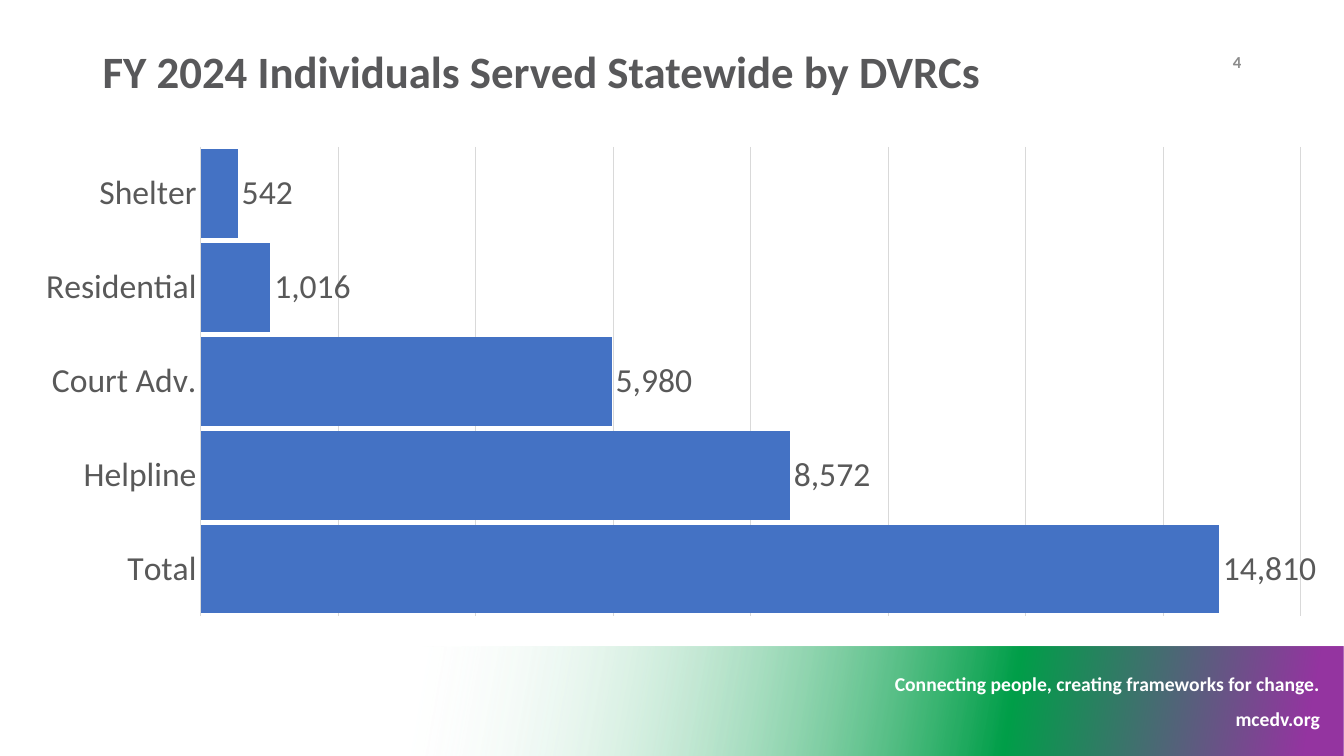
from dataclasses import dataclass

from lxml import etree
from pptx import Presentation
from pptx import util as u
from pptx.chart import data as chart_data
from pptx.dml.color import RGBColor
from pptx.enum import chart as chart_enum
from pptx.enum import shapes, text
from pptx.oxml import parse_xml
from pptx.oxml.ns import nsdecls, qn

FONT = "Calibri"
WHITE = RGBColor(0xFF, 0xFF, 0xFF)
GREEN = RGBColor(0x00, 0x9E, 0x48)
PURPLE = RGBColor(0x94, 0x34, 0xA0)
TITLE_GRAY = RGBColor(0x58, 0x58, 0x5A)
NUMBER_GRAY = RGBColor(0x8C, 0x8C, 0x8C)
LABEL_GRAY = RGBColor(0x59, 0x59, 0x59)
GRID_GRAY = RGBColor(0xD9, 0xD9, 0xD9)
BAR_BLUE = RGBColor(0x44, 0x72, 0xC4)

SLIDE_WIDTH = u.Inches(13.33)
SLIDE_HEIGHT = u.Inches(7.5)


@dataclass(frozen=True)
class Area:
    """Left, top, width and height in percent of the slide."""

    left: float
    top: float
    width: float
    height: float

    def lengths(self) -> tuple[int, int, int, int]:
        return (
            round(SLIDE_WIDTH * self.left / 100),
            round(SLIDE_HEIGHT * self.top / 100),
            round(SLIDE_WIDTH * self.width / 100),
            round(SLIDE_HEIGHT * self.height / 100),
        )


@dataclass(frozen=True)
class Label:
    words: str
    area: Area
    size: int
    color: RGBColor
    align: text.PP_ALIGN = text.PP_ALIGN.RIGHT
    anchor: text.MSO_ANCHOR = text.MSO_ANCHOR.MIDDLE
    line_spacing: float = 1.0


@dataclass(frozen=True)
class Stop:
    position: int
    color: RGBColor
    opacity: int = 100


FOOTER = Area(0, 85.47, 100, 14.53)
FOOTER_STOPS = [Stop(30, WHITE, 2), Stop(75, GREEN), Stop(97, PURPLE)]
FOOTER_ANGLE = 10

LABELS = [
    Label("mcedv.org", Area(88, 92.8, 10.95, 4.53), 14, WHITE,
          anchor=text.MSO_ANCHOR.TOP),
    Label("Connecting people, creating frameworks for change.",
          Area(64, 88.27, 34.95, 4.53), 14, WHITE, anchor=text.MSO_ANCHOR.TOP),
    Label("FY 2024 Individuals Served Statewide by DVRCs",
          Area(6.9, 5.33, 77.8, 8.8), 32, TITLE_GRAY,
          align=text.PP_ALIGN.LEFT, line_spacing=0.9),
    Label("4", Area(86.35, 5.47, 6.75, 5.33), 12, NUMBER_GRAY),
]

CHART = Area(1.28, 18.13, 97.45, 64.67)
PLOT_SHARES = {"x": 0.14, "y": 0.02, "w": 0.84, "h": 0.96}
SERVED = {
    "Total": 14810,
    "Helpline": 8572,
    "Court Adv.": 5980,
    "Residential": 1016,
    "Shelter": 542,
}


def add_footer(page) -> None:
    band = page.shapes.add_shape(shapes.MSO_SHAPE.RECTANGLE, *FOOTER.lengths())
    band.shadow.inherit = False
    band.line.fill.background()
    band.fill.gradient()
    band.fill.gradient_angle = 360 - FOOTER_ANGLE
    stops = band.element.spPr.find(".//" + qn("a:gsLst"))
    for old in list(stops):
        stops.remove(old)
    for stop in FOOTER_STOPS:
        entry = etree.SubElement(stops, qn("a:gs"), pos=str(stop.position * 1000))
        color = etree.SubElement(entry, qn("a:srgbClr"), val=str(stop.color))
        if stop.opacity < 100:
            etree.SubElement(color, qn("a:alpha"), val=str(stop.opacity * 1000))


def style_font(font, size: int, color: RGBColor, bold: bool = False) -> None:
    font.name = FONT
    font.size = u.Pt(size)
    font.bold = bold
    font.color.rgb = color


def add_label(page, label: Label) -> None:
    box = page.shapes.add_textbox(*label.area.lengths())
    frame = box.text_frame
    frame.word_wrap = True
    frame.vertical_anchor = label.anchor
    frame.text = label.words
    para = frame.paragraphs[0]
    para.alignment = label.align
    para.line_spacing = label.line_spacing
    style_font(para.runs[0].font, label.size, label.color, bold=True)


def style_line(line) -> None:
    line.color.rgb = GRID_GRAY
    line.width = u.Pt(0.75)


def place_plot(chart) -> None:
    plot_area = chart.element.find(".//" + qn("c:plotArea"))
    for old in plot_area.findall(qn("c:layout")):
        plot_area.remove(old)
    shares = "".join(f'<c:{key} val="{share}"/>' for key, share in PLOT_SHARES.items())
    plot_area.insert(0, parse_xml(
        f'<c:layout {nsdecls("c")}><c:manualLayout><c:layoutTarget val="inner"/>'
        f'<c:xMode val="edge"/><c:yMode val="edge"/>{shares}'
        "</c:manualLayout></c:layout>"
    ))


def add_served_chart(page) -> None:
    served = chart_data.CategoryChartData(number_format="#,##0")
    served.categories = list(SERVED)
    served.add_series("Series 1", list(SERVED.values()))
    chart = page.shapes.add_chart(
        chart_enum.XL_CHART_TYPE.BAR_CLUSTERED, *CHART.lengths(), served
    ).chart
    chart.has_legend = False
    chart.has_title = False
    style_font(chart.font, 10, LABEL_GRAY)
    place_plot(chart)

    services = chart.category_axis
    services.major_tick_mark = chart_enum.XL_TICK_MARK.NONE
    services.has_major_gridlines = False
    style_font(services.tick_labels.font, 24, LABEL_GRAY)
    style_line(services.format.line)

    people = chart.value_axis
    people.visible = False
    people.minimum_scale = 0
    people.maximum_scale = 16000
    people.major_unit = 2000
    people.has_major_gridlines = True
    style_line(people.major_gridlines.format.line)

    plot = chart.plots[0]
    plot.gap_width = 6
    plot.vary_by_categories = False
    bars = plot.series[0]
    bars.format.fill.solid()
    bars.format.fill.fore_color.rgb = BAR_BLUE
    values = bars.data_labels
    values.show_value = True
    values.number_format = "#,##0"
    values.number_format_is_linked = False
    values.position = chart_enum.XL_LABEL_POSITION.OUTSIDE_END
    style_font(values.font, 24, LABEL_GRAY)


def main() -> None:
    deck = Presentation()
    deck.slide_width = SLIDE_WIDTH
    deck.slide_height = SLIDE_HEIGHT
    page = deck.slides.add_slide(deck.slide_layouts[6])
    add_footer(page)
    for label in LABELS:
        add_label(page, label)
    add_served_chart(page)
    deck.save("out.pptx")


if __name__ == "__main__":
    main()
